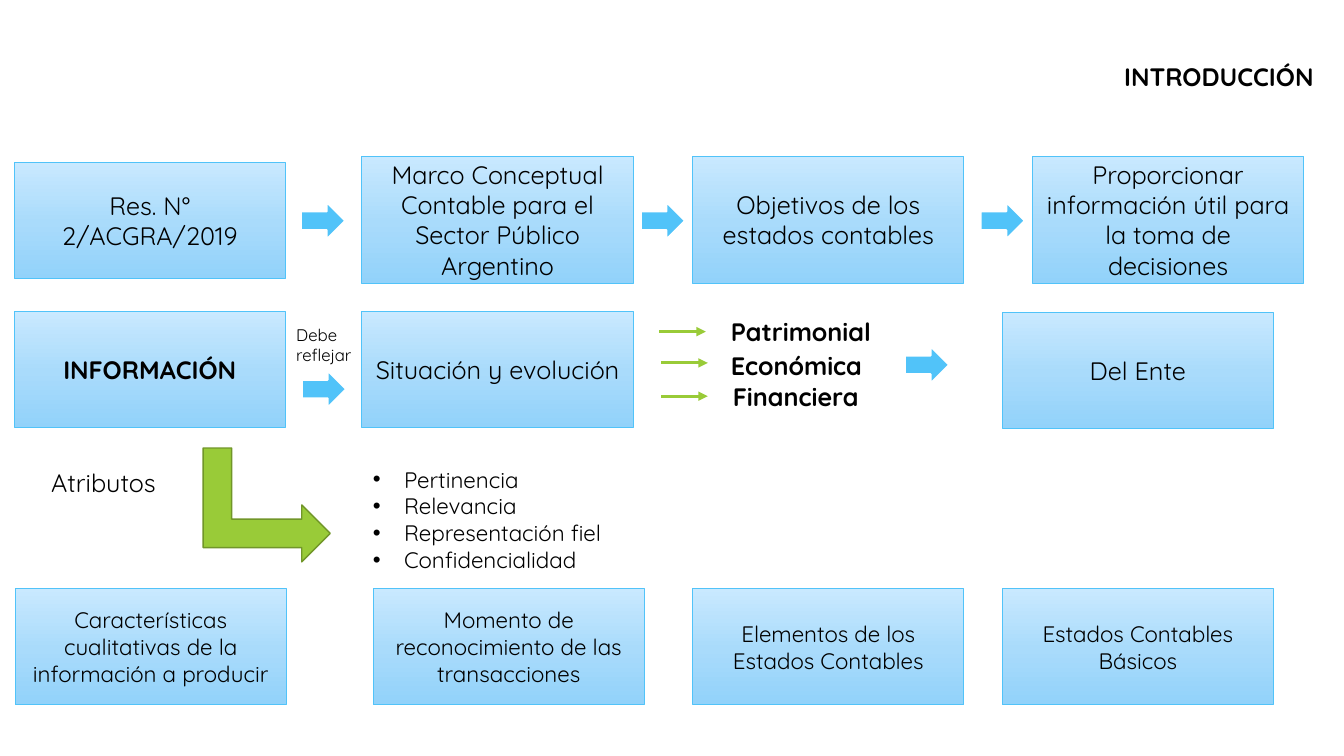
from copy import deepcopy
from pptx import Presentation
from pptx.dml.color import RGBColor
from pptx.enum import shapes, text
from pptx.oxml import ns, xmlchemy as xml
from pptx.util import Inches, Pt

SKY, GREEN = "51C3F9", "99CB38"


def rgb(code):
    return RGBColor.from_string(code)


def sub(parent, tag, **attrs):
    """Append a DrawingML element to parent."""
    node = xml.OxmlElement(tag)
    for key, val in attrs.items():
        node.set(key, val)
    parent.append(node)
    return node


class Board:
    font = "Quicksand"
    shades = [(0, "C9E9FF"), (0.52, "A9DBFB"), (1, "92D2FA")]

    def __init__(self, slide):
        self.slide = slide
        self.items = slide.shapes

    def add_run(self, para, words, size, bold=False):
        run = para.add_run()
        run.text = words
        font = run.font
        font.name, font.size, font.bold = self.font, Pt(size), bold
        font.color.rgb = rgb("000000")

    def title(self, words, x, y, w, h):
        head = self.items.title
        head.left, head.top, head.width, head.height = map(Inches, (x, y, w, h))
        frame = head.text_frame
        frame.vertical_anchor = text.MSO_ANCHOR.TOP
        frame.auto_size = text.MSO_AUTO_SIZE.NONE
        para = frame.paragraphs[0]
        para.alignment = text.PP_ALIGN.LEFT
        self.add_run(para, words, 18, True)

    def shape(self, kind, x, y, w, h, edge, thick):
        item = self.items.add_shape(kind, *map(Inches, (x, y, w, h)))
        item.shadow.inherit = False
        item.line.color.rgb = rgb(edge)
        item.line.width = Pt(thick)
        return item

    def box(self, words, x, y, h=1.15, size=18, bold=False):
        item = self.shape(shapes.MSO_SHAPE.RECTANGLE, x, y, 2.69, h, SKY, 0.75)
        fill = item.fill
        fill.gradient()
        fill.gradient_angle = 270
        stops = item._element.spPr.find(ns.qn("a:gradFill")).find(ns.qn("a:gsLst"))
        stops.append(deepcopy(stops[0]))
        for stop, (pos, code) in zip(fill.gradient_stops, self.shades):
            stop.position = pos
            stop.color.rgb = rgb(code)
        frame = item.text_frame
        frame.word_wrap = True
        frame.vertical_anchor = text.MSO_ANCHOR.MIDDLE
        para = frame.paragraphs[0]
        para.alignment = text.PP_ALIGN.CENTER
        self.add_run(para, words, size, bold)

    def arrow(self, x, y):
        item = self.shape(shapes.MSO_SHAPE.DOWN_ARROW, x, y, 0.37, 0.44, "FFFFFF", 1.5)
        item.rotation = 270
        item.fill.solid()
        item.fill.fore_color.rgb = rgb(SKY)

    def bend(self, x, y, w, h):
        item = self.shape(shapes.MSO_SHAPE.BENT_UP_ARROW, x, y, w, h, "719629", 1)
        item.rotation = 90
        item.fill.solid()
        item.fill.fore_color.rgb = rgb(GREEN)

    def label(self, lines, x, y, w, h=0.4, size=18, bold=False, dots=False):
        frame = self.items.add_textbox(*map(Inches, (x, y, w, h))).text_frame
        frame.word_wrap = True
        for i, line in enumerate(lines):
            para = frame.add_paragraph() if i else frame.paragraphs[0]
            if dots:
                props = para._p.get_or_add_pPr()
                props.set("marL", str(Inches(0.31)))
                props.set("indent", str(-Inches(0.31)))
                sub(props, "a:buFont", typeface="Arial")
                sub(props, "a:buChar", char="•")
            self.add_run(para, line, size, bold)

    def link(self, x, y):
        line = self.items.add_connector(
            shapes.MSO_CONNECTOR.STRAIGHT, *map(Inches, (x, y, x + 0.46, y)))
        line.line.color.rgb = rgb(GREEN)
        line.line.width = Pt(2.25)
        props = line._element.spPr
        sub(props.find(ns.qn("a:ln")), "a:tailEnd", type="triangle")
        sub(props, "a:effectLst")


def main():
    deck = Presentation()
    deck.slide_width, deck.slide_height = Inches(13.33), Inches(7.5)
    board = Board(deck.slides.add_slide(deck.slide_layouts[5]))
    board.title("INTRODUCCIÓN", 11.05, 0.56, 2.25, 0.4)

    board.box("Res. N° 2/ACGRA/2019", 0.14, 1.61)
    for x, words in [
        (3.59, "Marco Conceptual Contable para el Sector Público Argentino"),
        (6.87, "Objetivos de los estados contables"),
        (10.24, "Proporcionar información útil para la toma de decisiones"),
    ]:
        board.box(words, x, 1.55, 1.26)
    for i in range(3):
        board.arrow(3.02 + 3.37 * i, 1.97)

    board.box("INFORMACIÓN", 0.14, 3.09, bold=True)
    board.label(["Debe reflejar"], 2.84, 3.17, 0.76, 0.5, 12)
    board.arrow(3.03, 3.64)
    board.box("Situación y evolución", 3.59, 3.09)
    for words, x, y, start, level in [
        ("Patrimonial", 7.15, 3.09, 6.54, 3.29),
        ("Económica", 7.15, 3.43, 6.56, 3.6),
        ("Financiera", 7.17, 3.73, 6.56, 3.93),
    ]:
        board.link(start, level)
        board.label([words], x, y, 2.01, bold=True)
    board.arrow(9.01, 3.4)
    board.box("Del Ente", 9.94, 3.1)

    board.label(["Atributos"], 0.41, 4.59, 1.46)
    board.bend(2.08, 4.38, 1.13, 1.26)
    board.label(["Pertinencia", "Relevancia", "Representación fiel", "Confidencialidad"],
                3.6, 4.57, 2.68, 1.18, 16, dots=True)

    for x, words in [
        (0.15, "Características cualitativas de la información a producir"),
        (3.7, "Momento de reconocimiento de las transacciones"),
        (6.87, "Elementos de los Estados Contables"),
        (9.94, "Estados Contables Básicos"),
    ]:
        board.box(words, x, 5.84, size=16)
    deck.save("out.pptx")


if __name__ == "__main__":
    main()
